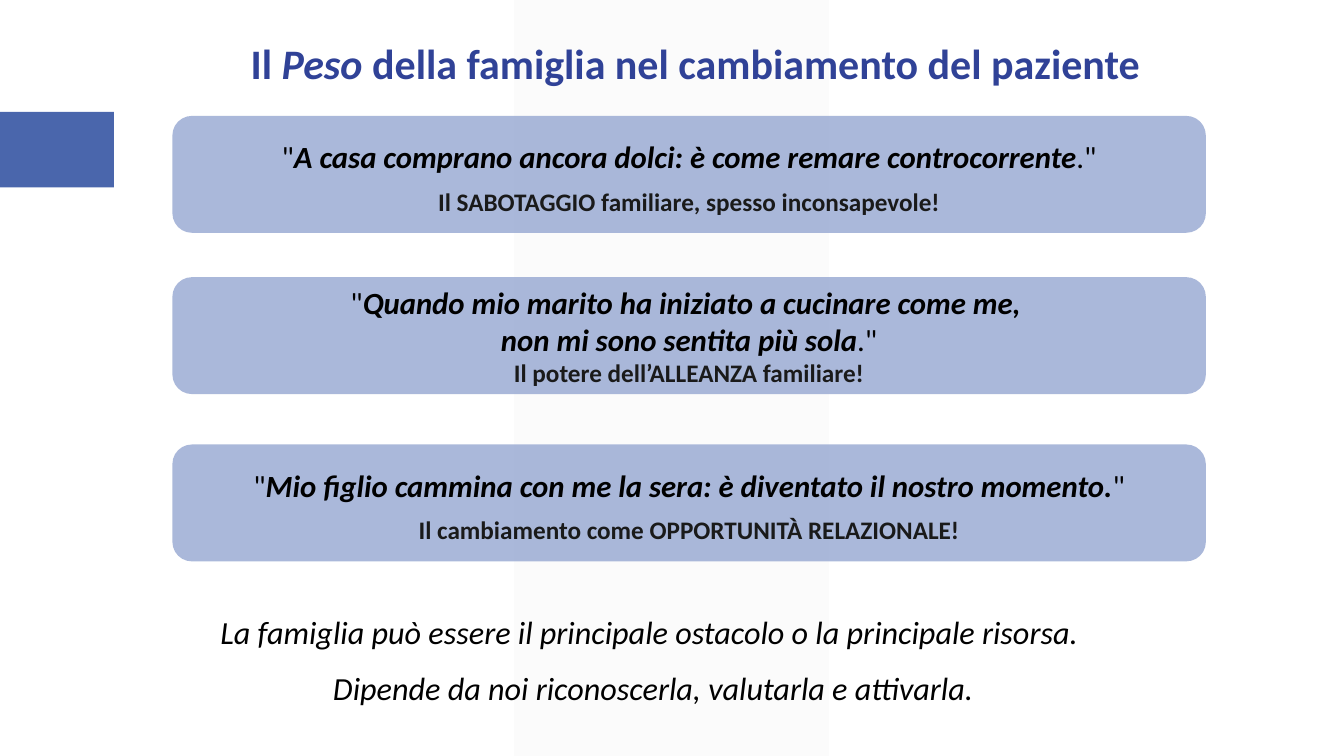
"""Build a slide on the weight of the family in a patient's change."""
from dataclasses import dataclass

from lxml import etree
from pptx import Presentation
from pptx.dml.color import RGBColor
from pptx.enum.shapes import MSO_SHAPE
from pptx.enum.text import MSO_ANCHOR, PP_ALIGN
from pptx.oxml.ns import qn
from pptx.util import Inches, Pt

RECTANGLE = MSO_SHAPE.RECTANGLE
ROUNDED = MSO_SHAPE.ROUNDED_RECTANGLE
PARALLELOGRAM = MSO_SHAPE.PARALLELOGRAM
MIDDLE, TOP = MSO_ANCHOR.MIDDLE, MSO_ANCHOR.TOP
CENTER = PP_ALIGN.CENTER

TITLE = [
    ("Il ", {"bold": True}),
    ("Peso", {"bold": True, "italic": True}),
    (" della famiglia nel cambiamento del paziente", {"bold": True}),
]
STRONG = {"bold": True, "italic": True}
QUOTES = [
    {
        "top": 1.15,
        "lines": [[('"', {}),
                   ("A casa comprano ancora dolci: è come remare controcorrente", STRONG),
                   ('."', {})]],
        "message": "Il SABOTAGGIO familiare, spesso inconsapevole!",
        "airy": True,
    },
    {
        "top": 2.75,
        "lines": [[('"', {}),
                   ("Quando mio marito ha iniziato a cucinare come me, ", STRONG)],
                  [("non mi sono sentita più sola", STRONG), ('."', {})]],
        "message": "Il potere dell’ALLEANZA familiare!",
        "airy": False,
    },
    {
        "top": 4.41,
        "lines": [[('"', {}),
                   ("Mio figlio cammina con me la sera: è diventato il nostro momento.", STRONG),
                   ('"', {})]],
        "message": "Il cambiamento come OPPORTUNITÀ RELAZIONALE!",
        "airy": True,
    },
]
CLOSING = [
    "La famiglia può essere il principale ostacolo o la principale risorsa. ",
    "Dipende da noi riconoscerla, valutarla e attivarla.",
]


@dataclass(frozen=True)
class Theme:
    """Colours, font and type sizes."""
    font: str = "Calibri"
    title: str = "304297"
    text: str = "000000"
    message: str = "1A1A1A"
    band: str = "F2F2F2"
    tab: str = "4A66AC"
    card: str = "90A2CF"
    title_size: int = 30
    quote_size: int = 22
    message_size: int = 18
    closing_size: int = 23


THEME = Theme()


def add_block(page, kind, place, color, opacity=100):
    """Add a filled shape without line or shadow."""
    block = page.shapes.add_shape(kind, *map(Inches, place))
    block.shadow.inherit = False
    block.line.fill.background()
    block.fill.solid()
    block.fill.fore_color.rgb = RGBColor.from_string(color)
    if opacity < 100:
        tint = block.fill._xPr.find(".//" + qn("a:srgbClr"))
        etree.SubElement(tint, qn("a:alpha"), val=str(opacity * 1000))
    return block


def add_text_box(page, place):
    """Add a wrapping text box and return its frame."""
    frame = page.shapes.add_textbox(*map(Inches, place)).text_frame
    frame.word_wrap = True
    frame.vertical_anchor = TOP
    return frame


def write(frame, spans, size, color, airy=False):
    """Write one centred paragraph of formatted spans."""
    first = frame.paragraphs[0]
    para = frame.add_paragraph() if first.runs else first
    para.alignment = CENTER
    if airy:
        para.line_spacing = 1.15
        para.space_after = Pt(8)
    for text, style in spans:
        span = para.add_run()
        span.text = text
        span.font.name = THEME.font
        span.font.size = Pt(size)
        span.font.color.rgb = RGBColor.from_string(color)
        span.font.bold = style.get("bold", False)
        span.font.italic = style.get("italic", False)


def add_quote(page, quote):
    """Add a rounded card with a quotation and its message."""
    card = add_block(page, ROUNDED, (1.71, quote["top"], 10.25, 1.16), THEME.card, 76)
    frame = card.text_frame
    frame.word_wrap = True
    frame.vertical_anchor = MIDDLE
    for line in quote["lines"]:
        write(frame, line, THEME.quote_size, THEME.text, airy=quote["airy"])
    write(frame, [(quote["message"], {"bold": True})], THEME.message_size, THEME.message)


def main():
    """Build and save the deck."""
    deck = Presentation()
    deck.slide_width, deck.slide_height = Inches(13.33), Inches(7.5)
    page = deck.slides.add_slide(deck.slide_layouts[6])

    band = add_block(page, PARALLELOGRAM, (5.1, 0, 3.12, 7.5), THEME.band, 30)
    band.adjustments[0] = 0
    add_block(page, RECTANGLE, (0, 1.11, 1.13, 0.75), THEME.tab)

    heading = add_text_box(page, (1.15, 0.25, 11.5, 2.05))
    write(heading, TITLE, THEME.title_size, THEME.title, airy=True)

    for quote in QUOTES:
        add_quote(page, quote)

    closing = add_text_box(page, (0.32, 5.97, 12.33, 1.09))
    for line in CLOSING:
        write(closing, [(line, {"italic": True})], THEME.closing_size, THEME.text, airy=True)

    deck.save("out.pptx")


if __name__ == "__main__":
    main()
